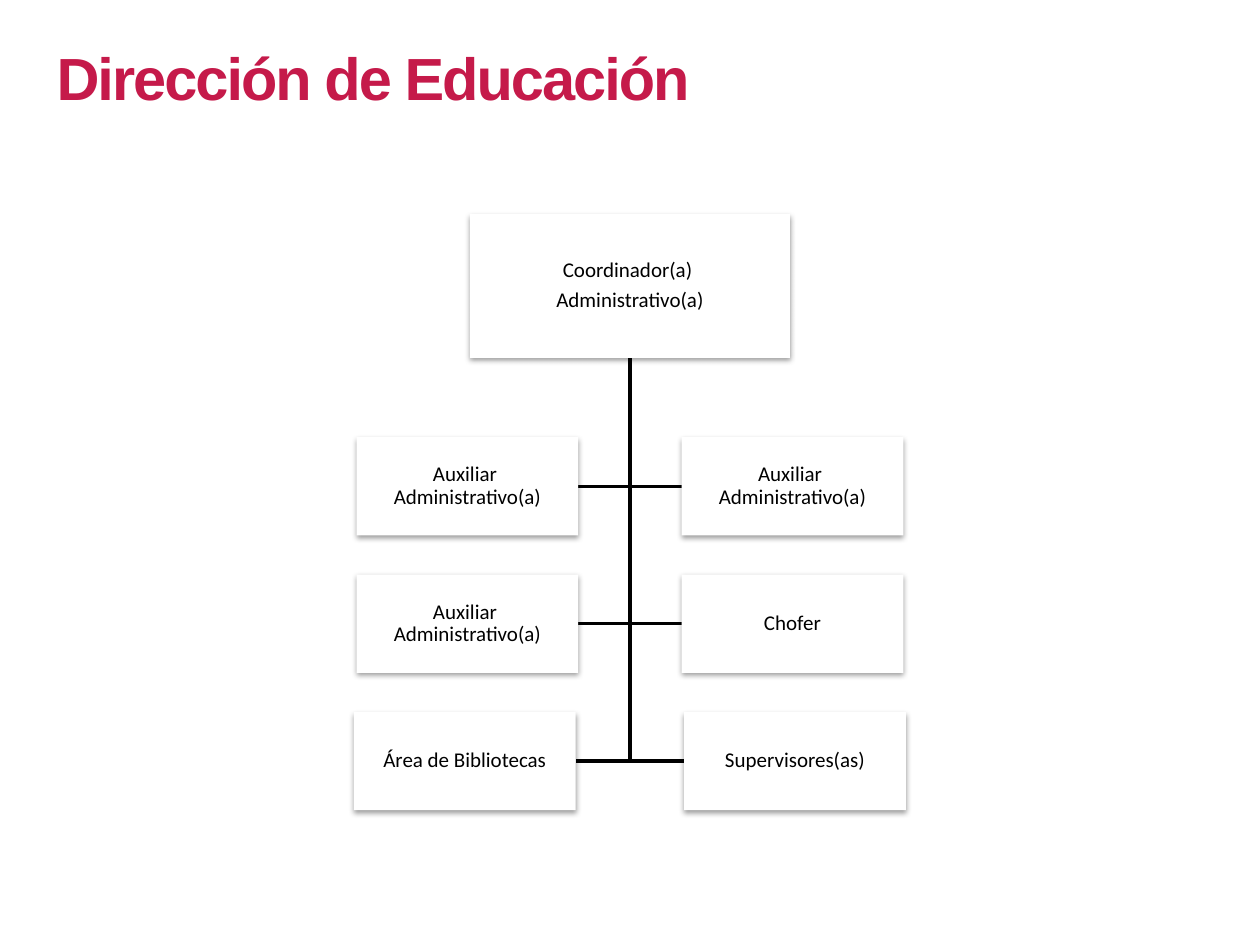
from dataclasses import dataclass

from pptx import Presentation
from pptx.dml.color import RGBColor
from pptx.enum.shapes import MSO_SHAPE
from pptx.enum.text import MSO_ANCHOR, PP_ALIGN
from pptx.oxml import parse_xml
from pptx.oxml.ns import nsdecls
from pptx.util import Inches, Pt


@dataclass(frozen=True)
class Theme:
    """Colours, fonts and type sizes of the slide."""
    title: RGBColor = RGBColor(0xC5, 0x1A, 0x4A)
    ink: RGBColor = RGBColor(0, 0, 0)
    paper: RGBColor = RGBColor(0xFF, 0xFF, 0xFF)
    title_font: str = "Arial"
    body_font: str = "Calibri"
    title_size: Pt = Pt(34)
    body_size: Pt = Pt(12)
    line: Pt = Pt(2)


THEME = Theme()
SHADOW = (
    f'<a:outerShdw {nsdecls("a")} blurRad="40000" dist="20000" dir="5400000" rotWithShape="0">'
    '<a:srgbClr val="000000"><a:alpha val="38000"/></a:srgbClr></a:outerShdw>'
)
LEADER = ["Coordinador(a) ", "Administrativo(a)"]
AUXILIARY = "Auxiliar \nAdministrativo(a)"
ROWS = [
    (AUXILIARY, AUXILIARY, 0.41),
    (AUXILIARY, "Chofer", 0.41),
    ("Área de Bibliotecas", "Supervisores(as)", 0.43),
]


def apply(target, values):
    """Set each named format value on the target."""
    for name, value in values.items():
        setattr(target, name, value)


def add_title(slide, text, left, top, width, height):
    """Place the slide title in the given box."""
    box = slide.shapes.add_textbox(Inches(left), Inches(top), Inches(width), Inches(height))
    tf = box.text_frame
    tf.word_wrap = True
    r = tf.paragraphs[0].add_run()
    r.text = text
    apply(r.font, {"name": THEME.title_font, "size": THEME.title_size, "bold": True})
    r.font.color.rgb = THEME.title
    r.font._element.set("spc", "-110")


def add_card(slide, lines, left, top, width, height):
    """Place a white shadowed card with centred paragraphs."""
    s = slide.shapes.add_shape(
        MSO_SHAPE.RECTANGLE, Inches(left), Inches(top), Inches(width), Inches(height))
    s.shadow.inherit = False
    s._element.spPr.find("{*}effectLst").append(parse_xml(SHADOW))
    s.fill.solid()
    s.fill.fore_color.rgb = THEME.paper
    s.line.fill.background()
    tf = s.text_frame
    margins = ("margin_left", "margin_top", "margin_right", "margin_bottom")
    apply(tf, {"word_wrap": True, "vertical_anchor": MSO_ANCHOR.MIDDLE,
               **dict.fromkeys(margins, Inches(0.01))})
    for i, line in enumerate(lines):
        p = tf.add_paragraph() if i else tf.paragraphs[0]
        p.text = line
        apply(p, {"alignment": PP_ALIGN.CENTER, "line_spacing": 0.9, "space_after": Pt(4.2)})
        for r in p.runs:
            apply(r.font, {"name": THEME.body_font, "size": THEME.body_size})
            r.font.color.rgb = THEME.ink


def add_elbow(slide, x, top, bottom, end):
    """Draw a line down from the leader and sideways to a card."""
    builder = slide.shapes.build_freeform(Inches(x), Inches(top))
    builder.add_line_segments(
        [(Inches(x), Inches(bottom)), (Inches(end), Inches(bottom))], close=False)
    s = builder.convert_to_shape()
    s.shadow.inherit = False
    s.fill.background()
    s.line.color.rgb = THEME.ink
    s.line.width = THEME.line


def add_org_chart(slide, left, top, width):
    """Place the leader above rows of card pairs, joined by a central spine."""
    lead_w, lead_h, card_w, card_h = 2.54, 1.14, 1.76, 0.78
    first_row, step = 1.77, 1.09
    center = left + width / 2
    cards = []
    for i, (left_text, right_text, gap) in enumerate(ROWS):
        y = top + first_row + i * step
        for text, x, end in ((left_text, center - gap - card_w, center - gap),
                             (right_text, center + gap, center + gap)):
            cards.append((text, x, y))
            add_elbow(slide, center, top + lead_h, y + card_h / 2, end)
    add_card(slide, LEADER, center - lead_w / 2, top, lead_w, lead_h)
    for text, x, y in cards:
        add_card(slide, [text], x, y, card_w, card_h)


def main():
    """Build and save the slide."""
    prs = Presentation()
    apply(prs, {"slide_width": Inches(10), "slide_height": Inches(7.5)})
    slide = prs.slides.add_slide(prs.slide_layouts[6])
    add_title(slide, "Dirección de Educación", 0.35, 0.28, 5.72, 0.69)
    add_org_chart(slide, 2.81, 1.7, 4.38)
    prs.save("out.pptx")


if __name__ == "__main__":
    main()
